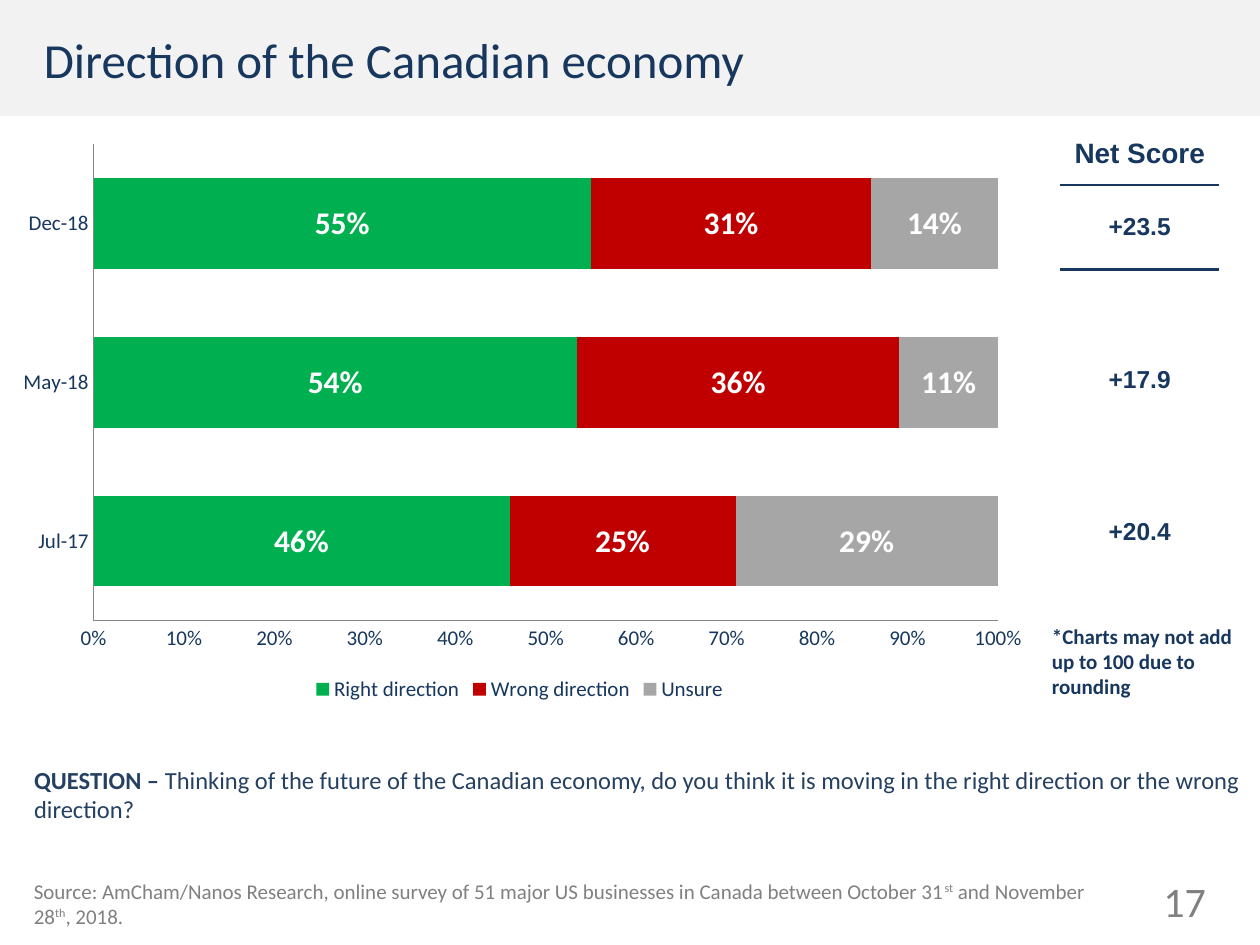
import pptx
import pptx.chart.data
import pptx.dml.color
import pptx.enum.chart
import pptx.enum.shapes
import pptx.enum.text
import pptx.oxml
import pptx.util
from pptx.util import Inches

COLORS = {
    "band": "F2F2F2", "navy": "17375E", "question": "254061", "grey": "808080",
    "axis": "868686", "white": "FFFFFF",
    "right": "00B050", "wrong": "C00000", "unsure": "A6A6A6",
}
ALIGN = pptx.enum.text.PP_ALIGN
ANCHOR = pptx.enum.text.MSO_ANCHOR


def rgb(name):
    return pptx.dml.color.RGBColor.from_string(COLORS[name])


def style_font(font, size, color, **extra):
    """Apply size in points, a named colour and any further font attributes."""
    values = {"name": "Calibri", "size": pptx.util.Pt(size), "bold": False, **extra}
    for attribute, value in values.items():
        setattr(font, attribute, value)
    font.color.rgb = rgb(color)


presentation = pptx.Presentation()
presentation.slide_width = Inches(10)
presentation.slide_height = Inches(7.5)
slide = presentation.slides.add_slide(presentation.slide_layouts[6])

# Title band
band = slide.shapes.add_shape(
    pptx.enum.shapes.MSO_SHAPE.RECTANGLE, 0, 0, Inches(10), Inches(0.92))
band.shadow.inherit = False
band.fill.solid()
band.fill.fore_color.rgb = rgb("band")
band.line.fill.background()

# Text boxes: position, size, colour, anchor, alignment, (text, bold, superscript)
text_boxes = [
    ((0.25, 0.01, 6.91, 0.91), 28, "navy", ANCHOR.MIDDLE, ALIGN.LEFT,
     [("Direction of the Canadian economy", False, False)]),
    ((8.25, 4.9, 1.75, 0.71), 12, "navy", ANCHOR.TOP, ALIGN.LEFT,
     [("*Charts may not add up to 100 due to rounding", True, False)]),
    ((0.2, 6.03, 9.75, 0.78), 14, "question", ANCHOR.TOP, ALIGN.LEFT,
     [("QUESTION – ", True, False),
      ("Thinking of the future of the Canadian economy, do you think it is "
       "moving in the right direction or the wrong direction?", False, False)]),
    ((0.17, 6.92, 8.83, 0.4), 12, "grey", ANCHOR.TOP, ALIGN.LEFT,
     [("Source: AmCham/Nanos Research, online survey of 51 major US businesses "
       "in Canada between October 31", False, False),
      ("st", False, True), (" and November 28", False, False),
      ("th", False, True), (", 2018.", False, False)]),
    ((9, 6.95, 0.67, 0.4), 24, "grey", ANCHOR.MIDDLE, ALIGN.RIGHT,
     [("17", False, False)]),
]
for position, size, color, anchor, alignment, runs in text_boxes:
    frame = slide.shapes.add_textbox(*map(Inches, position)).text_frame
    frame.word_wrap = True
    frame.vertical_anchor = anchor
    if color == "question":
        frame.margin_left = frame.margin_right = Inches(0.07)
        frame.margin_top = frame.margin_bottom = Inches(0.04)
    paragraph = frame.paragraphs[0]
    paragraph.alignment = alignment
    for text, bold, superscript in runs:
        run = paragraph.add_run()
        run.text = text
        style_font(run.font, size, color, bold=bold)
        if superscript:
            run.font._element.set("baseline", "30000")

# Direction chart
data = pptx.chart.data.CategoryChartData(number_format="0%")
data.categories = ["Jul-17", "May-18", "Dec-18"]
series_rows = [
    ("Right direction", (0.46, 0.54, 0.55), "right"),
    ("Wrong direction", (0.25, 0.36, 0.31), "wrong"),
    ("Unsure", (0.29, 0.11, 0.14), "unsure"),
]
for name, values, color in series_rows:
    data.add_series(name, values)
chart = slide.shapes.add_chart(
    pptx.enum.chart.XL_CHART_TYPE.BAR_STACKED_100,
    0, Inches(1.05), Inches(8.25), Inches(4.56), data).chart
chart.has_title = False
style_font(chart.font, 12, "navy")
chart.has_legend = True
chart.legend.position = pptx.enum.chart.XL_LEGEND_POSITION.BOTTOM
chart.legend.include_in_layout = False
style_font(chart.legend.font, 12, "navy")

plot = chart.plots[0]
plot.vary_by_categories = False
plot.gap_width = 75
plot.overlap = 100
for series, (name, values, color) in zip(plot.series, series_rows):
    series.format.fill.solid()
    series.format.fill.fore_color.rgb = rgb(color)
    labels = series.data_labels
    labels.show_value = True
    labels.number_format = "0%"
    labels.number_format_is_linked = False
    style_font(labels.font, 18, "white", bold=True)

for axis in (chart.category_axis, chart.value_axis):
    axis.has_major_gridlines = False
    axis.major_tick_mark = pptx.enum.chart.XL_TICK_MARK.NONE
    axis.minor_tick_mark = pptx.enum.chart.XL_TICK_MARK.NONE
    axis.format.line.color.rgb = rgb("axis")
    axis.format.line.width = pptx.util.Pt(0.75)
    style_font(axis.tick_labels.font, 12, "navy")
chart.value_axis.minimum_scale = 0
chart.value_axis.maximum_scale = 1
chart.value_axis.major_unit = 0.1
chart.value_axis.tick_labels.number_format = "0%"
chart.value_axis.tick_labels.number_format_is_linked = False

plot_area = chart._chartSpace.chart.plotArea
for old_layout in plot_area.xpath("c:layout"):
    plot_area.remove(old_layout)
plot_area.insert(0, pptx.oxml.parse_xml(
    '<c:layout xmlns:c="http://schemas.openxmlformats.org/drawingml/2006/chart">'
    '<c:manualLayout><c:layoutTarget val="inner"/>'
    '<c:xMode val="edge"/><c:yMode val="edge"/><c:x val="0.09"/><c:y val="0.02"/>'
    '<c:w val="0.87"/><c:h val="0.83"/></c:manualLayout></c:layout>'))

# Net score table
scores = ["Net Score", "+23.5", "", "+17.9", "", "+20.4"]
row_heights = [0.49, 0.67, 0.49, 0.77, 0.49, 0.66]
table = slide.shapes.add_table(
    len(scores), 1, Inches(8.42), Inches(0.98), Inches(1.25), Inches(3.57)).table
table.first_row = False
table.horz_banding = False
for index, (score, height) in enumerate(zip(scores, row_heights)):
    table.rows[index].height = Inches(height)
    cell = table.cell(index, 0)
    cell.vertical_anchor = ANCHOR.MIDDLE
    if score:
        paragraph = cell.text_frame.paragraphs[0]
        paragraph.alignment = ALIGN.CENTER
        run = paragraph.add_run()
        run.text = score
        style_font(run.font, 14 if index else 16, "navy", name="Arial", bold=True)
    side = {0: "lnB", 1: "lnT"}.get(index)
    if side:
        cell._tc.get_or_add_tcPr().append(pptx.oxml.parse_xml(
            f'<a:{side} xmlns:a="http://schemas.openxmlformats.org/drawingml/2006/main" '
            f'w="19050"><a:solidFill><a:srgbClr val="{COLORS["navy"]}"/></a:solidFill>'
            f'</a:{side}>'))
    cell.fill.background()

presentation.save("out.pptx")
